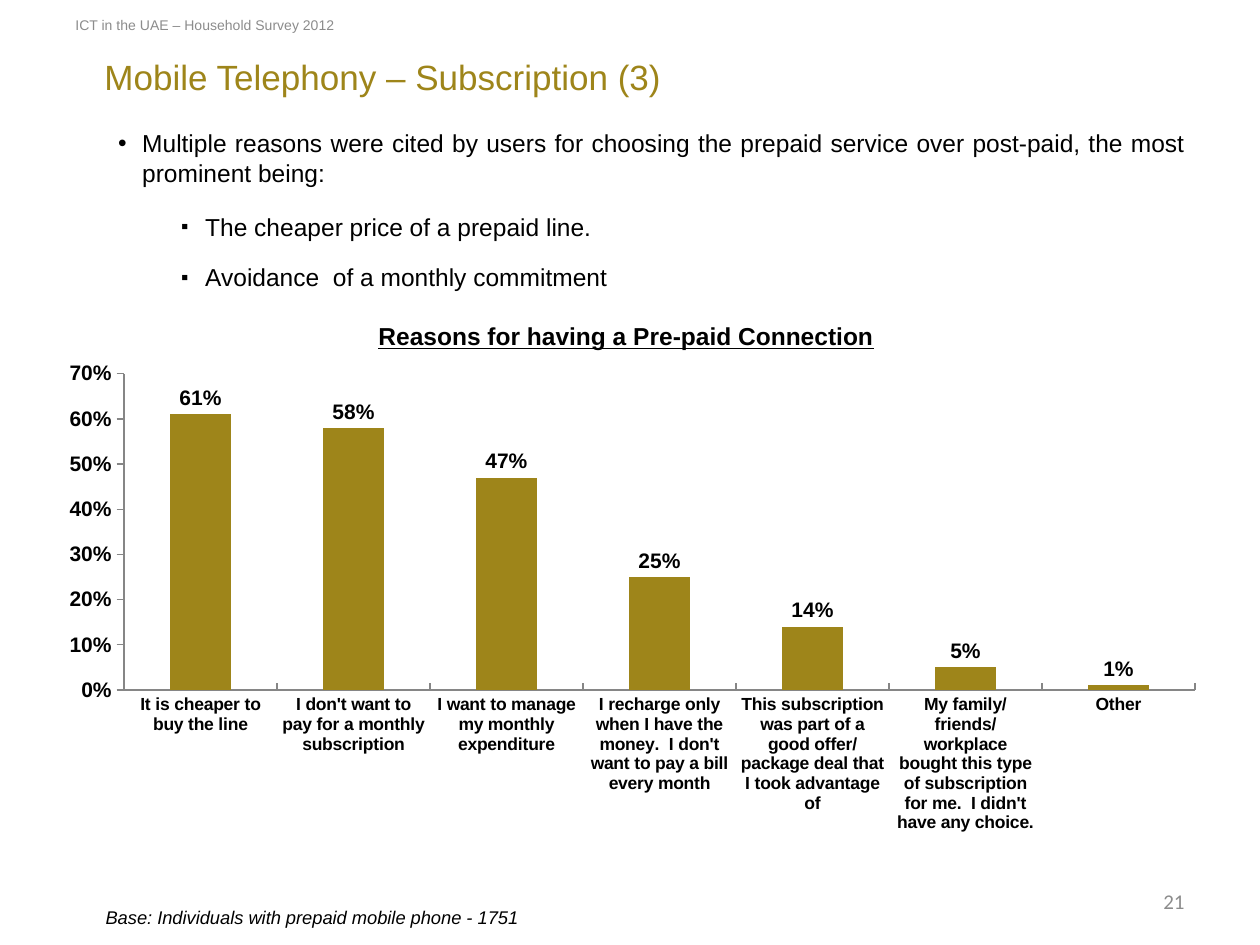
"""Build the slide on reasons for having a pre-paid mobile connection."""
from lxml import etree
from pptx import Presentation
from pptx.chart.data import CategoryChartData
from pptx.dml.color import RGBColor
from pptx.enum.chart import XL_CHART_TYPE, XL_LABEL_POSITION, XL_TICK_MARK
from pptx.enum.text import MSO_ANCHOR, PP_ALIGN
from pptx.oxml.ns import qn
from pptx.util import Inches, Pt

COLUMN_CHART = XL_CHART_TYPE.COLUMN_CLUSTERED
OUTSIDE_END = XL_LABEL_POSITION.OUTSIDE_END
TICK_IN, TICK_OUT, TICK_NONE = XL_TICK_MARK.INSIDE, XL_TICK_MARK.OUTSIDE, XL_TICK_MARK.NONE
TOP, MIDDLE = MSO_ANCHOR.TOP, MSO_ANCHOR.MIDDLE
LEFT, CENTER, RIGHT, JUSTIFY = PP_ALIGN.LEFT, PP_ALIGN.CENTER, PP_ALIGN.RIGHT, PP_ALIGN.JUSTIFY
COLORS = {"gold": "9E851A", "grey": "8C8C8C", "axis": "868686", "black": "000000"}

presentation = Presentation()
presentation.slide_width, presentation.slide_height = Inches(10), Inches(7.5)
slide = presentation.slides.add_slide(presentation.slide_layouts[6])
column = presentation.slide_width / 100
row = presentation.slide_height / 75


def style_font(font, size, color="black", name="Arial", bold=False):
    font.size, font.name, font.bold = Pt(size), name, bold
    font.color.rgb = RGBColor.from_string(COLORS[color])


def add_text_frame(left, top, width, height, anchor=TOP, wrap=True):
    box = slide.shapes.add_textbox(
        int(left * column), int(top * row), int(width * column), int(height * row)
    )
    box.text_frame.word_wrap, box.text_frame.vertical_anchor = wrap, anchor
    return box.text_frame


labels = [
    ("Mobile Telephony – Subscription (3)", (7.3, 3.6, 80.9, 5, MIDDLE), LEFT, (20, "gold")),
    ("21", (71.7, 69.5, 23.3, 4, MIDDLE), RIGHT, (12, "grey", "Calibri")),
    ("ICT in the UAE – Household Survey 2012", (5, 0, 52.5, 4, MIDDLE), LEFT, (8, "grey")),
    ("Reasons for having a Pre-paid Connection", (28.7, 25, 42, 3.4, TOP, False), CENTER,
     (14, "black", "Arial", True)),
    ("Base: Individuals with prepaid mobile phone - 1751", (7.4, 71.4, 45, 2.9), LEFT, (10.5,)),
]
paragraphs = []
for text, place, alignment, style in labels:
    paragraph = add_text_frame(*place).paragraphs[0]
    paragraph.text, paragraph.alignment = text, alignment
    style_font(paragraph.font, *style)
    paragraphs.append(paragraph)
paragraphs[3].font.underline = True
paragraphs[4].font.italic = True

bullets = [
    ("Multiple reasons were cited by users for choosing the prepaid service over post-paid, "
     "the most prominent being:", 0, 0.19, "•", 100, 14),
    ("The cheaper price of a prepaid line.", 1, 0.69, "▪", 85, 12),
    ("Avoidance  of a monthly commitment", 1, 0.69, "▪", 85, 12),
]
reasons_frame = add_text_frame(8.4, 9.7, 86.7, 14.5)
for index, (text, level, indent, mark, percent, space_after) in enumerate(bullets):
    paragraph = reasons_frame.add_paragraph() if index else reasons_frame.paragraphs[0]
    paragraph.text, paragraph.level, paragraph.alignment = text, level, JUSTIFY
    properties = paragraph._p.get_or_add_pPr()
    properties.set("marL", str(Inches(indent)))
    properties.set("indent", str(-Inches(0.19)))
    etree.SubElement(properties, qn("a:buSzPct"), val=str(percent * 1000))
    etree.SubElement(properties, qn("a:buFont"), typeface="Arial")
    etree.SubElement(properties, qn("a:buChar"), char=mark)
    paragraph.space_after = Pt(space_after)
    style_font(paragraph.font, 14)

reasons = {
    "It is cheaper to buy the line": 0.61,
    "I don't want to pay for a monthly subscription": 0.58,
    "I want to manage my monthly expenditure": 0.47,
    "I recharge only when I have the money.  I don't want to pay a bill every month": 0.25,
    "This subscription was part of a good offer/ package deal that I took advantage of": 0.14,
    "My family/ friends/ workplace bought this type of subscription for me.  "
    "I didn't have any choice.": 0.05,
    "Other": 0.01,
}
chart_data = CategoryChartData(number_format="0%")
chart_data.categories = list(reasons)
chart_data.add_series("Series 1", list(reasons.values()))
chart = slide.shapes.add_chart(
    COLUMN_CHART, int(5 * column), int(28.6 * row), int(91.4 * column), int(42.7 * row), chart_data
).chart
chart.has_legend = chart.has_title = False
style_font(chart.font, 10)

plot = chart.plots[0]
plot.gap_width, plot.vary_by_categories, plot.has_data_labels = 150, False, True
fill = plot.series[0].format.fill
fill.solid()
fill.fore_color.rgb = RGBColor.from_string(COLORS["gold"])
data_labels = plot.data_labels
data_labels.show_value, data_labels.position = True, OUTSIDE_END
data_labels.number_format, data_labels.number_format_is_linked = "0%", False
style_font(data_labels.font, 12, bold=True)

for axis, tick, size in ((chart.category_axis, TICK_IN, 10), (chart.value_axis, TICK_OUT, 12)):
    axis.major_tick_mark, axis.minor_tick_mark = tick, TICK_NONE
    axis.has_major_gridlines = False
    axis.format.line.color.rgb = RGBColor.from_string(COLORS["axis"])
    axis.format.line.width = Pt(0.75)
    style_font(axis.tick_labels.font, size, bold=True)
value_axis = chart.value_axis
value_axis.minimum_scale, value_axis.maximum_scale, value_axis.major_unit = 0, 0.7, 0.1
value_axis.tick_labels.number_format = "0%"
value_axis.tick_labels.number_format_is_linked = False

plot_area = chart._chartSpace.chart.plotArea
for layout in plot_area.findall(qn("c:layout")):
    plot_area.remove(layout)
layout = etree.Element(qn("c:layout"))
plot_area.insert(0, layout)
manual_layout = etree.SubElement(layout, qn("c:manualLayout"))
for tag, value in (
    ("layoutTarget", "inner"), ("xMode", "edge"), ("yMode", "edge"),
    ("x", "0.053"), ("y", "0.025"), ("w", "0.93"), ("h", "0.588"),
):
    etree.SubElement(manual_layout, qn(f"c:{tag}"), val=value)

presentation.save("out.pptx")
